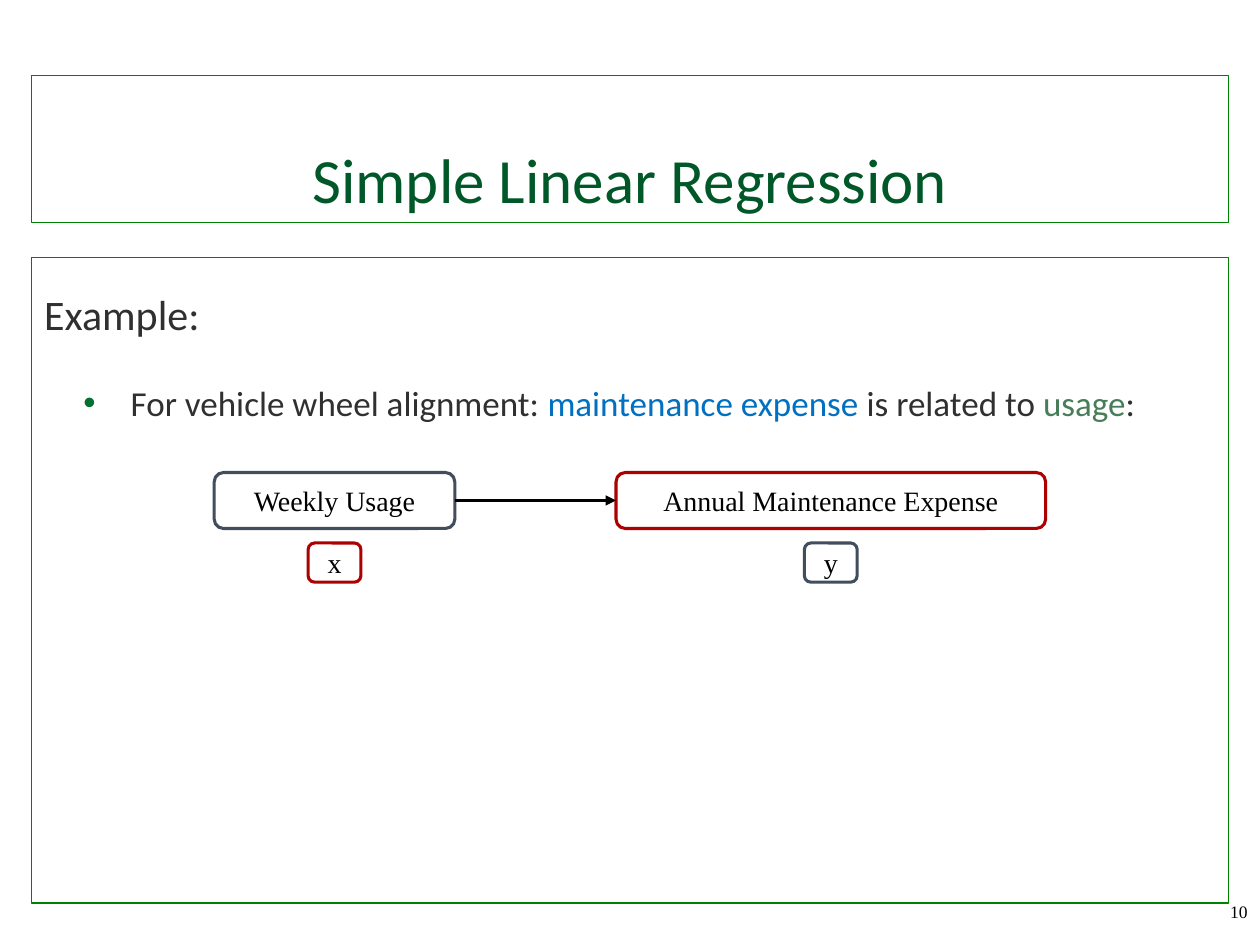
from lxml import etree
from pptx import Presentation
from pptx import util as u
from pptx.dml.color import RGBColor
from pptx.enum import shapes, text
from pptx.oxml import ns

Pt = u.Pt
COLORS = {
    "frame": "008200", "title": "005828", "body": "303030", "bullet": "007033",
    "expense": "0070C0", "usage": "477D59", "slate": "424E5B", "red": "AD0101",
    "white": "FFFFFF", "black": "000000",
}
SANS, SERIF = "Calibri", "Times New Roman"

# Content
TITLE = "Simple Linear Regression"
HEADING = [("Example:", "body")]
STATEMENT = [
    ("For vehicle wheel alignment: ", "body"), ("maintenance expense ", "expense"),
    ("is related to ", "body"), ("usage", "usage"), (":", "body"),
]
SLIDE_NUMBER = "10"
# Variable: name, name outline, symbol, symbol outline, left, width
VARIABLES = [
    ("Weekly Usage", "slate", "x", "red", 122.4, 137.5),
    ("Annual Maintenance Expense", "red", "y", "slate", 352, 245.5),
]
NAME_TOP, NAME_HEIGHT = 270, 32
SYMBOL_TOP, SYMBOL_WIDTH, SYMBOL_HEIGHT = 310.3, 30.2, 22.4


def color(name):
    return RGBColor.from_string(COLORS[name])


def add_runs(paragraph, runs, size, font):
    for words, color_name in runs:
        run = paragraph.add_run()
        run.text = words
        run.font.size, run.font.name = Pt(size), font
        run.font.color.rgb = color(color_name)


def place_frame(shape, top, height):
    shape.left, shape.top, shape.width, shape.height = Pt(18), Pt(top), Pt(684), Pt(height)
    shape.line.color.rgb = color("frame")
    shape.line.width = Pt(0.75)
    shape.text_frame.auto_size = text.MSO_AUTO_SIZE.NONE


def set_bullet(paragraph, margin, indent, character=None):
    properties = paragraph._p.get_or_add_pPr()
    properties.set("marL", str(Pt(margin)))
    properties.set("indent", str(Pt(indent)))
    if character is None:
        etree.SubElement(properties, ns.qn("a:buNone"))
        return
    bullet_color = etree.SubElement(properties, ns.qn("a:buClr"))
    etree.SubElement(bullet_color, ns.qn("a:srgbClr"), val=COLORS["bullet"])
    etree.SubElement(properties, ns.qn("a:buFont"), typeface="Arial")
    etree.SubElement(properties, ns.qn("a:buChar"), char=character)


def add_box(slide, words, outline, left, top, width, height):
    shape = slide.shapes.add_shape(
        shapes.MSO_SHAPE.ROUNDED_RECTANGLE, Pt(left), Pt(top), Pt(width), Pt(height))
    shape.shadow.inherit = False
    shape.fill.solid()
    shape.fill.fore_color.rgb = color("white")
    shape.line.color.rgb = color(outline)
    shape.line.width = Pt(1.75)
    frame = shape.text_frame
    frame.margin_top = frame.margin_bottom = 0
    frame.vertical_anchor = text.MSO_ANCHOR.MIDDLE
    frame.paragraphs[0].alignment = text.PP_ALIGN.CENTER
    add_runs(frame.paragraphs[0], [(words, "black")], 16, SERIF)
    return shape


presentation = Presentation()
presentation.slide_width, presentation.slide_height = Pt(720), Pt(540)
slide = presentation.slides.add_slide(presentation.slide_layouts[1])

# Title
title = slide.shapes.title
place_frame(title, 43.2, 84)
title.text_frame.vertical_anchor = text.MSO_ANCHOR.BOTTOM
title.text_frame.paragraphs[0].alignment = text.PP_ALIGN.CENTER
add_runs(title.text_frame.paragraphs[0], [(TITLE, "title")], 36, SANS)

# Body
body = slide.placeholders[1]
place_frame(body, 147, 369)
heading = body.text_frame.paragraphs[0]
statement = body.text_frame.add_paragraph()
for paragraph, before in ((heading, 0), (statement, 6)):
    paragraph.line_spacing = 1.5
    paragraph.space_before, paragraph.space_after = Pt(before), Pt(6)
set_bullet(heading, 0, 0)
set_bullet(statement, 49.5, -27, "•")
add_runs(heading, HEADING, 24, SANS)
add_runs(statement, STATEMENT, 20, SANS)

# Slide number
number = slide.shapes.add_textbox(Pt(660), Pt(511.2), Pt(60), Pt(28.8))
number.text_frame.word_wrap = True
number.text_frame.paragraphs[0].alignment = text.PP_ALIGN.RIGHT
add_runs(number.text_frame.paragraphs[0], [(SLIDE_NUMBER, "black")], 10, SERIF)

# Variables, each symbol centred under its name
name_boxes = []
for name, name_outline, symbol, symbol_outline, left, width in VARIABLES:
    name_boxes.append(add_box(slide, name, name_outline, left, NAME_TOP, width, NAME_HEIGHT))
    add_box(slide, symbol, symbol_outline, left + (width - SYMBOL_WIDTH) / 2,
            SYMBOL_TOP, SYMBOL_WIDTH, SYMBOL_HEIGHT)

# Arrow from usage to expense
arrow = slide.shapes.add_connector(shapes.MSO_CONNECTOR.STRAIGHT, 0, 0, 0, 0)
arrow.begin_connect(name_boxes[0], 3)
arrow.end_connect(name_boxes[1], 1)
arrow.line.color.rgb = color("black")
arrow.line.width = Pt(1.25)
etree.SubElement(arrow.line._get_or_add_ln(), ns.qn("a:tailEnd"), type="triangle")
etree.SubElement(arrow._element.spPr, ns.qn("a:effectLst"))

presentation.save("out.pptx")
